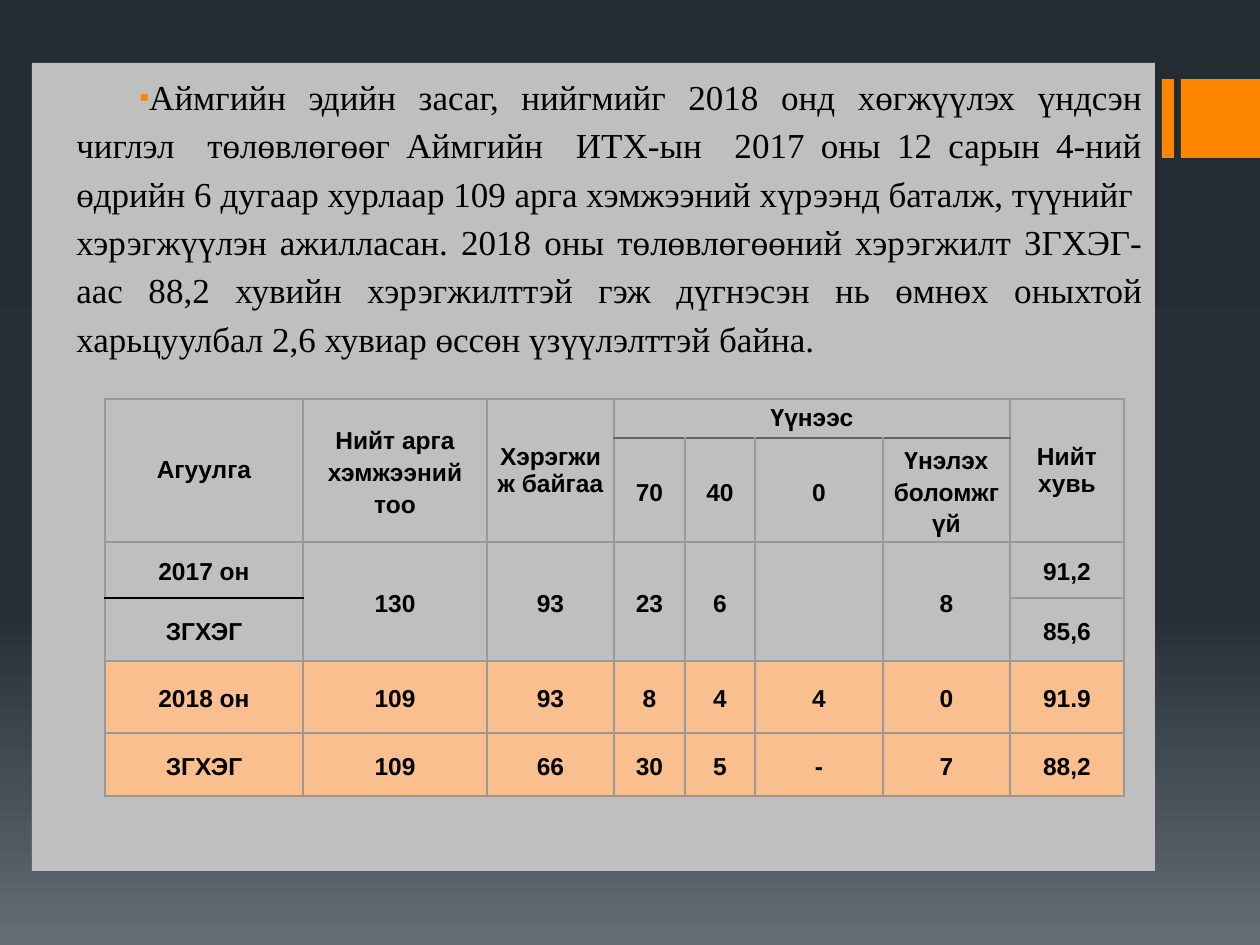
"""Build the slide on the 2018 plan's fulfilment, with its comparison table."""
from copy import deepcopy

from lxml import etree
from pptx import Presentation
from pptx.dml.color import RGBColor
from pptx.enum.shapes import MSO_SHAPE
from pptx.enum.text import MSO_ANCHOR, PP_ALIGN
from pptx.oxml.ns import qn
from pptx.util import Pt

RECTANGLE = MSO_SHAPE.RECTANGLE
TOP, MIDDLE = MSO_ANCHOR.TOP, MSO_ANCHOR.MIDDLE
CENTER, JUSTIFY = PP_ALIGN.CENTER, PP_ALIGN.JUSTIFY
PX = 914400 / 126

THEME = {
    "backdrop": [(0, "242C33"), (0.65, "273037"), (1, "636D76")],
    "accent": "FF8600", "panel": "BFBFBF", "highlight": "FABF8F",
    "ink": "000000", "grid": "999999", "rule": "666666",
    "body": {"name": "Times New Roman", "size": Pt(20), "bold": False},
    "cell": {"name": "Arial", "size": Pt(14), "bold": True},
}


def px(length):
    return round(length * PX)


def write(para, text, font, layout):
    span = para.add_run()
    span.text = text
    span.font.color.rgb = RGBColor.from_string(THEME["ink"])
    for target, values in ((span.font, font), (para, layout)):
        for name, value in values.items():
            setattr(target, name, value)


deck = Presentation()
deck.slide_width, deck.slide_height = px(1260), px(945)
page = deck.slides.add_slide(deck.slide_layouts[6])

backdrop = page.background.fill
backdrop.gradient()
backdrop.gradient_angle = 270
stop_list = next(page.element.iter(qn("a:gsLst")))
stop_list.append(deepcopy(stop_list[0]))
for stop, (position, color) in zip(backdrop.gradient_stops, THEME["backdrop"]):
    stop.position = position
    stop.color.rgb = RGBColor.from_string(color)

BOXES = [
    (1162, 79, 12, 79, "accent"),
    (1181, 79, 79, 79, "accent"),
    (32, 63, 1123, 808, "panel"),
]
for left, top, width, height, color in BOXES:
    box = page.shapes.add_shape(RECTANGLE, px(left), px(top), px(width), px(height))
    box.shadow.inherit = False
    box.fill.solid()
    box.fill.fore_color.rgb = RGBColor.from_string(THEME[color])
    box.line.fill.background()

SUMMARY = (
    "Аймгийн эдийн засаг, нийгмийг 2018 онд хөгжүүлэх үндсэн чиглэл  төлөвлөгөөг "
    "Аймгийн  ИТХ-ын  2017 оны 12 сарын 4-ний өдрийн 6 дугаар хурлаар 109 арга "
    "хэмжээний хүрээнд баталж, түүнийг  хэрэгжүүлэн ажилласан. 2018 оны төлөвлөгөөний "
    "хэрэгжилт ЗГХЭГ-аас 88,2 хувийн хэрэгжилттэй гэж дүгнэсэн нь өмнөх оныхтой "
    "харьцуулбал 2,6 хувиар өссөн үзүүлэлттэй байна."
)
frame = box.text_frame
frame.word_wrap = True
frame.vertical_anchor = TOP
para = frame.paragraphs[0]
write(para, SUMMARY, THEME["body"],
      {"alignment": JUSTIFY, "line_spacing": 1.15, "space_before": Pt(4)})
properties = para._p.get_or_add_pPr()
properties.set("marL", str(px(32)))
properties.set("indent", str(px(63)))
bullet_color = etree.SubElement(properties, qn("a:buClr"))
etree.SubElement(bullet_color, qn("a:srgbClr"), val=THEME["accent"])
etree.SubElement(properties, qn("a:buSzPct"), val="80000")
etree.SubElement(properties, qn("a:buFont"), typeface="Arial")
etree.SubElement(properties, qn("a:buChar"), char="▪")

COLUMNS = [198, 184, 127, 71, 70, 128, 127, 114]
ROWS = [39, 104, 56, 63, 72, 63]
CELLS = [
    ["Агуулга", "Нийт арга хэмжээний тоо", "Хэрэгжиж байгаа", "Үүнээс",
     "", "", "", "Нийт хувь"],
    ["", "", "", "70", "40", "0", "Үнэлэх боломжгүй", ""],
    ["2017 он", "130", "93", "23", "6", "", "8", "91,2"],
    ["ЗГХЭГ", "", "", "", "", "", "", "85,6"],
    ["2018 он", "109", "93", "8", "4", "4", "0", "91.9"],
    ["ЗГХЭГ", "109", "66", "30", "5", "-", "7", "88,2"],
]
TIGHT_HEADINGS = ("Агуулга", "Хэрэгжиж байгаа", "Үүнээс", "Нийт хувь")
HIGHLIGHT_FROM = 4
CELL_FORMAT = {
    "vertical_anchor": MIDDLE, "margin_left": px(8), "margin_right": px(8),
    "margin_top": px(1), "margin_bottom": 0,
}
SPECIAL_BORDERS = {(2, 0, "B"): ("ink", 1), (3, 0, "T"): ("ink", 1)}
for column in range(3, 7):
    SPECIAL_BORDERS[0, column, "B"] = SPECIAL_BORDERS[1, column, "T"] = ("rule", 1.5)

table = page.shapes.add_table(len(ROWS), len(COLUMNS), px(105), px(399),
                              px(sum(COLUMNS)), px(sum(ROWS))).table
table.first_row = table.horz_banding = False
for column, width in zip(table.columns, COLUMNS):
    column.width = px(width)
for row, height in zip(table.rows, ROWS):
    row.height = px(height)

for row, texts in enumerate(CELLS):
    for column, text in enumerate(texts):
        cell = table.cell(row, column)
        for name, value in CELL_FORMAT.items():
            setattr(cell, name, value)
        for side in "LRTB":
            color, weight = SPECIAL_BORDERS.get((row, column, side), ("grid", 1))
            border = etree.SubElement(cell._tc.get_or_add_tcPr(), qn(f"a:ln{side}"),
                                      w=str(Pt(weight)))
            paint = etree.SubElement(border, qn("a:solidFill"))
            etree.SubElement(paint, qn("a:srgbClr"), val=THEME[color])
        if row >= HIGHLIGHT_FROM:
            cell.fill.solid()
            cell.fill.fore_color.rgb = RGBColor.from_string(THEME["highlight"])
        else:
            cell.fill.background()
        if text:
            spacing = Pt(15.1) if text in TIGHT_HEADINGS else 1.15
            write(cell.text_frame.paragraphs[0], text, THEME["cell"],
                  {"alignment": CENTER, "line_spacing": spacing})

table.cell(0, 3).merge(table.cell(0, 6))
for column in (0, 1, 2, 7):
    table.cell(0, column).merge(table.cell(1, column))
for column in range(1, 7):
    table.cell(2, column).merge(table.cell(3, column))

deck.save("out.pptx")
